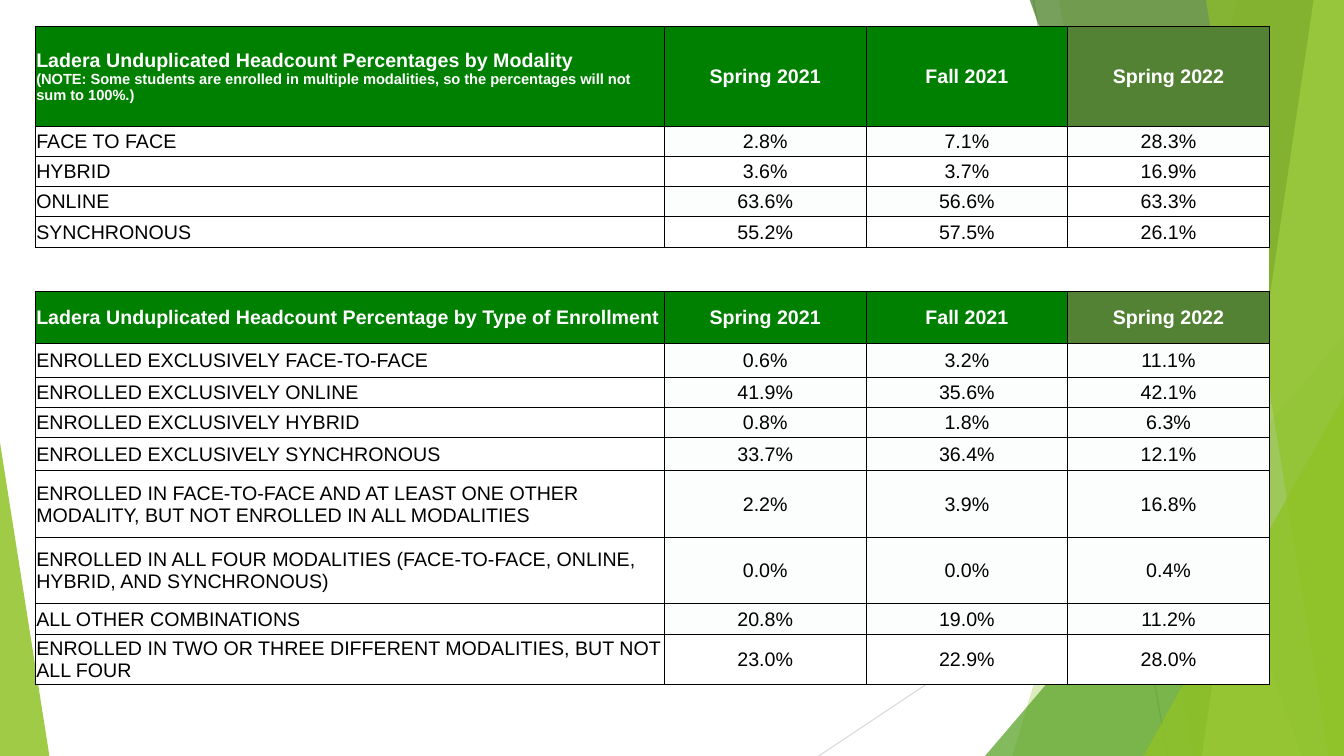
from lxml.etree import SubElement
from pptx import Presentation
from pptx.dml.color import RGBColor
from pptx.enum.shapes import MSO_CONNECTOR, MSO_SHAPE
from pptx.enum.text import MSO_ANCHOR, PP_ALIGN
from pptx.oxml.ns import qn
from pptx.util import Inches, Pt

# The grid has square cells of one inch
COLUMNS, ROWS = 13.33, 7.5
GREEN, OLIVE, WHITE, TINT, BLACK = "008000", "548235", "FFFFFF", "FCFDFD", "000000"
LIME = "90C226"
TERMS = ["Spring 2021", "Fall 2021", "Spring 2022"]
ALL_SIDES = "LRTB"

# Label, values, number of tinted values, row height
MODALITIES = [
    ("FACE TO FACE", "2.8% 7.1% 28.3%", 3, 0.3),
    ("HYBRID", "3.6% 3.7% 16.9%", 0, 0.3),
    ("ONLINE", "63.6% 56.6% 63.3%", 2, 0.3),
    ("SYNCHRONOUS", "55.2% 57.5% 26.1%", 0, 0.3),
]
ENROLLMENTS = [
    ("ENROLLED EXCLUSIVELY FACE-TO-FACE", "0.6% 3.2% 11.1%", 3, 0.33),
    ("ENROLLED EXCLUSIVELY ONLINE", "41.9% 35.6% 42.1%", 3, 0.3),
    ("ENROLLED EXCLUSIVELY HYBRID", "0.8% 1.8% 6.3%", 3, 0.3),
    ("ENROLLED EXCLUSIVELY SYNCHRONOUS", "33.7% 36.4% 12.1%", 3, 0.33),
    ("ENROLLED IN FACE-TO-FACE AND AT LEAST ONE OTHER MODALITY, "
     "BUT NOT ENROLLED IN ALL MODALITIES", "2.2% 3.9% 16.8%", 3, 0.66),
    ("ENROLLED IN ALL FOUR MODALITIES (FACE-TO-FACE, ONLINE, HYBRID, "
     "AND SYNCHRONOUS)", "0.0% 0.0% 0.4%", 3, 0.66),
    ("ALL OTHER COMBINATIONS", "20.8% 19.0% 11.2%", 3, 0.3),
    ("ENROLLED IN TWO OR THREE DIFFERENT MODALITIES, BUT NOT ALL FOUR",
     "23.0% 22.9% 28.0%", 0, 0.5),
]


def colour(value):
    return RGBColor.from_string(value)


class Board:
    font, size, note_size, gap_size = "Arial", 14, 10.5, 8
    border = 0.5

    def __init__(self, presentation):
        presentation.slide_width = Inches(COLUMNS)
        presentation.slide_height = Inches(ROWS)
        self.slide = presentation.slides.add_slide(presentation.slide_layouts[6])
        self.shapes = self.slide.shapes

    def line(self, start, end, line_colour):
        connector = self.shapes.add_connector(
            MSO_CONNECTOR.STRAIGHT, *map(Inches, start + end))
        connector.line.color.rgb = colour(line_colour)
        connector.line.width = Pt(0.75)
        SubElement(connector._element.spPr, qn("a:effectLst"))

    def paint(self, shape, fill, opacity):
        shape.shadow.inherit = False
        shape.line.fill.background()
        shape.fill.solid()
        shape.fill.fore_color.rgb = colour(fill)
        fill_colour = shape._element.spPr.find(qn("a:solidFill"))[0]
        SubElement(fill_colour, qn("a:alpha"), val=str(opacity * 1000))

    def facet(self, top, bottom, fill, opacity):
        """A band from a slanted left side to the right edge of the slide."""
        corners = [(top, -0.01), (COLUMNS, -0.01), (COLUMNS, ROWS), (bottom, ROWS)]
        points = [(Inches(x), Inches(y)) for x, y in corners]
        builder = self.shapes.build_freeform(*points[0])
        builder.add_line_segments(points[1:], close=True)
        self.paint(builder.convert_to_shape(), fill, opacity)

    def triangle(self, left, width, height, peak, fill, opacity):
        """A triangle that stands on the bottom edge of the slide."""
        shape = self.shapes.add_shape(
            MSO_SHAPE.ISOSCELES_TRIANGLE,
            *map(Inches, (left, ROWS - height, width, height)))
        shape.adjustments[0] = peak
        self.paint(shape, fill, opacity)

    def table(self, left, top, widths, heights):
        frame = self.shapes.add_table(
            len(heights), len(widths),
            *map(Inches, (left, top, sum(widths), sum(heights))))
        table = frame.table
        table.first_row = table.horz_banding = False
        for column, width in zip(table.columns, widths):
            column.width = Inches(width)
        for row, height in zip(table.rows, heights):
            row.height = Inches(height)
        return table

    def cell(self, cell, lines, fill, ink=BLACK, bold=False, centred=False,
             sides=ALL_SIDES):
        """Lines are pairs of text and size."""
        properties = cell._tc.get_or_add_tcPr()
        for side in ALL_SIDES:
            edge = SubElement(properties, qn(f"a:ln{side}"),
                              w=str(Pt(self.border)))
            if side in sides:
                solid = SubElement(edge, qn("a:solidFill"))
                SubElement(solid, qn("a:srgbClr"), val=BLACK)
            else:
                SubElement(edge, qn("a:noFill"))
        cell.fill.solid()
        cell.fill.fore_color.rgb = colour(fill)
        cell.vertical_anchor = MSO_ANCHOR.MIDDLE
        cell.margin_left = cell.margin_right = cell.margin_top = Inches(0.01)
        cell.margin_bottom = 0
        cell.text = "\n".join(text for text, size in lines)
        for paragraph, (text, size) in zip(cell.text_frame.paragraphs, lines):
            paragraph.alignment = PP_ALIGN.CENTER if centred else PP_ALIGN.LEFT
            paragraph.font.name = self.font
            paragraph.font.size = Pt(size)
            paragraph.font.bold = bold
            paragraph.font.color.rgb = colour(ink)
            if not text:
                SubElement(paragraph._p, qn("a:endParaRPr"), sz=str(size * 100))

    def header(self, cells, lines):
        self.cell(cells[0], lines, GREEN, WHITE, True)
        for cell, term, fill in zip(cells[1:], TERMS, (GREEN, GREEN, OLIVE)):
            self.cell(cell, [(term, self.size)], fill, WHITE, True, True)

    def record(self, cells, label, values, tinted):
        self.cell(cells[0], [(label, self.size)], WHITE)
        for index, value in enumerate(values.split()):
            self.cell(cells[index + 1], [(value, self.size)],
                      TINT if index < tinted else WHITE, centred=True)

    def gap(self, cells, side):
        for cell in cells:
            self.cell(cell, [("", self.gap_size)], WHITE, sides=side)


def main():
    presentation = Presentation()
    board = Board(presentation)

    # Faceted background
    board.line((10.25, 0), (11.58, ROWS), "BFBFBF")
    board.line((COLUMNS, 4.03), (8.12, ROWS), "D9D9D9")
    board.facet(12.28, 10.04, LIME, 30)
    board.facet(10.5, 11.83, LIME, 20)
    board.triangle(9.77, 3.56, 4.17, 1, "54A021", 72)
    board.facet(10.21, 12.91, "3F7819", 70)
    board.facet(13.03, 11.92, "C0E474", 70)
    board.facet(11.96, 13.18, LIME, 65)
    board.triangle(11.34, 1.99, 3.57, 1, LIME, 80)
    board.triangle(0, 0.49, 3.11, 0, LIME, 85)

    # Table frame
    heights = ([0.99] + [row[-1] for row in MODALITIES] + [0.22, 0.22, 0.52]
               + [row[-1] for row in ENROLLMENTS])
    table = board.table(0.35, 0.26, [6.24, 2, 2, 2], heights)
    rows = iter([list(row.cells) for row in table.rows])

    # Headcount by modality
    board.header(next(rows), [
        ("Ladera Unduplicated Headcount Percentages by Modality", board.size),
        ("(NOTE: Some students are enrolled in multiple modalities, so the "
         "percentages will not sum to 100%.)", board.note_size)])
    for label, values, tinted, height in MODALITIES:
        board.record(next(rows), label, values, tinted)

    # Gap between the two parts
    for side in "TB":
        board.gap(next(rows), side)

    # Headcount by type of enrollment
    board.header(next(rows), [
        ("Ladera Unduplicated Headcount Percentage by Type of Enrollment",
         board.size)])
    for label, values, tinted, height in ENROLLMENTS:
        board.record(next(rows), label, values, tinted)

    presentation.save("out.pptx")


if __name__ == "__main__":
    main()
